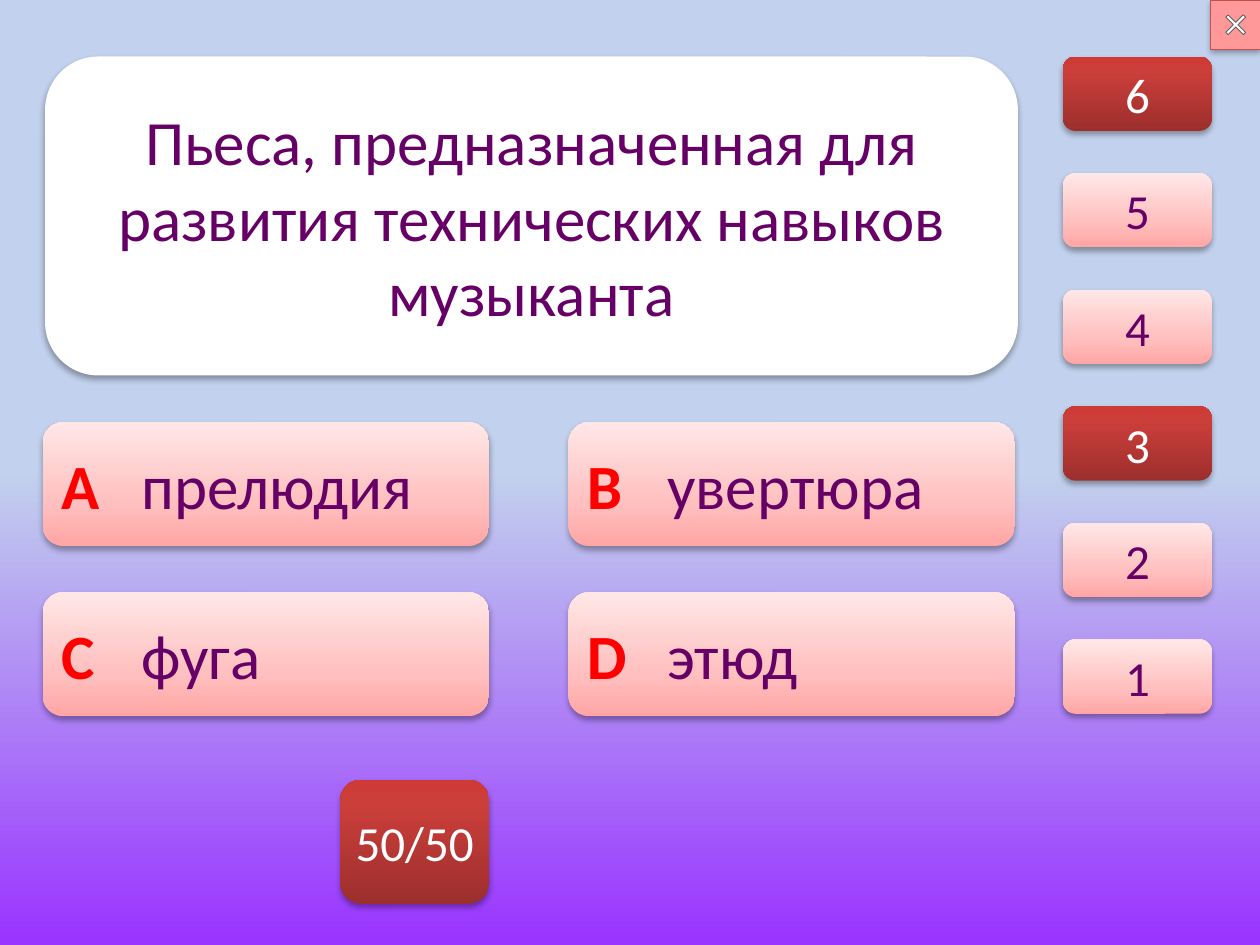
from copy import deepcopy
from dataclasses import dataclass

from lxml import etree
from pptx import Presentation
from pptx.dml.color import RGBColor
from pptx.enum.shapes import MSO_SHAPE
from pptx.enum.text import MSO_ANCHOR, PP_ALIGN
from pptx.oxml.ns import qn
from pptx.util import Cm, Pt

ROUNDED = MSO_SHAPE.ROUNDED_RECTANGLE
ACTION_BUTTON = MSO_SHAPE.ACTION_BUTTON_CUSTOM
CROSS = MSO_SHAPE.CROSS
MIDDLE = MSO_ANCHOR.MIDDLE
CENTER = PP_ALIGN.CENTER
LEFT = PP_ALIGN.LEFT
BLANK_LAYOUT = 6


@dataclass(frozen=True)
class Theme:
    """Colours, gradients and type sizes of the quiz."""
    font: str = "Calibri"
    large: int = 36
    medium: int = 28
    purple: str = "660066"
    red: str = "FF0000"
    white: str = "FFFFFF"
    close_fill: str = "FF9999"
    close_border: str = "C0504D"
    cross_border: str = "5F5F5F"
    shadow: str = "000000"
    sky: tuple = ((0, "9933FF"), (0.5, "C2D1ED"))
    pink: tuple = ((0, "FFA6A5"), (0.35, "FFC0BF"), (1, "FFE7E7"))
    crimson: tuple = ((0, "9C2F2D"), (0.8, "CB3E3A"), (1, "CE3B37"))


THEME = Theme()
QUESTION = "Пьеса, предназначенная для развития технических навыков музыканта"
ANSWERS = (("А", "прелюдия"), ("В", "увертюра"), ("C", "фуга"), ("D", "этюд"))
LEVELS = (6, 5, 4, 3, 2, 1)
SAFE_LEVELS = (6, 3)


def paint_gradient(fill, element, stops):
    """Fill with colour stops that run from bottom to top."""
    fill.gradient()
    fill.gradient_angle = 90
    stop_list = element.find(".//" + qn("a:gsLst"))
    while len(stop_list) < len(stops):
        stop_list.append(deepcopy(stop_list[-1]))
    for stop, (position, color) in zip(fill.gradient_stops, stops):
        stop.position = position
        stop.color.rgb = RGBColor.from_string(color)


def cast_shadow(shape):
    """Give a shape a soft shadow below it."""
    effects = shape.element.spPr.find(qn("a:effectLst"))
    shadow = etree.SubElement(
        effects, qn("a:outerShdw"), blurRad=str(Pt(3.5)), dist=str(Pt(2.2)),
        dir="5400000", rotWithShape="0")
    color = etree.SubElement(shadow, qn("a:srgbClr"), val=THEME.shadow)
    etree.SubElement(color, qn("a:alpha"), val="32000")


def add_box(slide, kind, box, fill=None, border=None, shadow=False):
    """Add a shape with a plain, gradient or empty fill."""
    shape = slide.shapes.add_shape(kind, *(Cm(length) for length in box))
    if fill is None:
        shape.fill.background()
    elif isinstance(fill, tuple):
        paint_gradient(shape.fill, shape.element, fill)
    else:
        shape.fill.solid()
        shape.fill.fore_color.rgb = RGBColor.from_string(fill)
    if border:
        shape.line.color.rgb = RGBColor.from_string(border)
        shape.line.width = Pt(0.5)
    else:
        shape.line.fill.background()
    shape.shadow.inherit = False
    if shadow:
        cast_shadow(shape)
    return shape


def add_run(paragraph, text, size, color, bold=False):
    """Add a formatted run to a paragraph."""
    run = paragraph.add_run()
    run.text = text
    run.font.name = THEME.font
    run.font.size = Pt(size)
    run.font.bold = bold
    run.font.color.rgb = RGBColor.from_string(color)


def add_panel(slide, box, fill, alignment=CENTER, wrap=False):
    """Add a shadowed rounded panel and return its paragraph."""
    shape = add_box(slide, ROUNDED, box, fill, shadow=True)
    frame = shape.text_frame
    frame.word_wrap = wrap
    frame.vertical_anchor = MIDDLE
    paragraph = frame.paragraphs[0]
    paragraph.alignment = alignment
    return paragraph


def add_button(slide, box, text, highlighted):
    """Add a small button with a centred caption."""
    fill = THEME.crimson if highlighted else THEME.pink
    color = THEME.white if highlighted else THEME.purple
    add_run(add_panel(slide, box, fill), text, THEME.medium, color)


def add_answer(slide, box, letter, text):
    """Add an answer with its letter set off by a tab."""
    paragraph = add_panel(slide, box, THEME.pink, LEFT, wrap=True)
    properties = paragraph._p.get_or_add_pPr()
    tabs = etree.SubElement(properties, qn("a:tabLst"))
    etree.SubElement(tabs, qn("a:tab"), pos=str(Cm(1.62)), algn="l")
    add_run(paragraph, letter + "\t", THEME.large, THEME.red, bold=True)
    add_run(paragraph, text, THEME.large, THEME.purple)


def add_close_button(slide):
    """Add the corner button with its cross."""
    box = (24.41, 0, 0.99, 0.99)
    add_box(slide, ACTION_BUTTON, box, THEME.close_fill, shadow=True)
    cross = add_box(slide, CROSS, (24.66, 0.25, 0.5, 0.5), THEME.white,
                    THEME.cross_border)
    cross.adjustments[0] = 0.435
    cross.rotation = 45
    add_box(slide, ACTION_BUTTON, box, border=THEME.close_border)


def main():
    """Build the quiz slide."""
    presentation = Presentation()
    presentation.slide_width = Cm(25.4)
    presentation.slide_height = Cm(19.05)
    slide = presentation.slides.add_slide(
        presentation.slide_layouts[BLANK_LAYOUT])
    paint_gradient(slide.background.fill, slide.element, THEME.sky)
    add_close_button(slide)
    question = add_panel(slide, (0.91, 1.14, 19.61, 6.43), THEME.white,
                         wrap=True)
    add_run(question, QUESTION, THEME.large, THEME.purple)
    for index, (letter, text) in enumerate(ANSWERS):
        row, column = divmod(index, 2)
        box = (0.86 + 10.6 * column, 8.51 + 3.43 * row, 9, 2.5)
        add_answer(slide, box, letter, text)
    add_button(slide, (6.86, 15.72, 3, 2.5), "50/50", True)
    for index, level in enumerate(LEVELS):
        box = (21.43, 1.14 + 2.35 * index, 3, 1.5)
        add_button(slide, box, str(level), level in SAFE_LEVELS)
    presentation.save("out.pptx")


if __name__ == "__main__":
    main()
